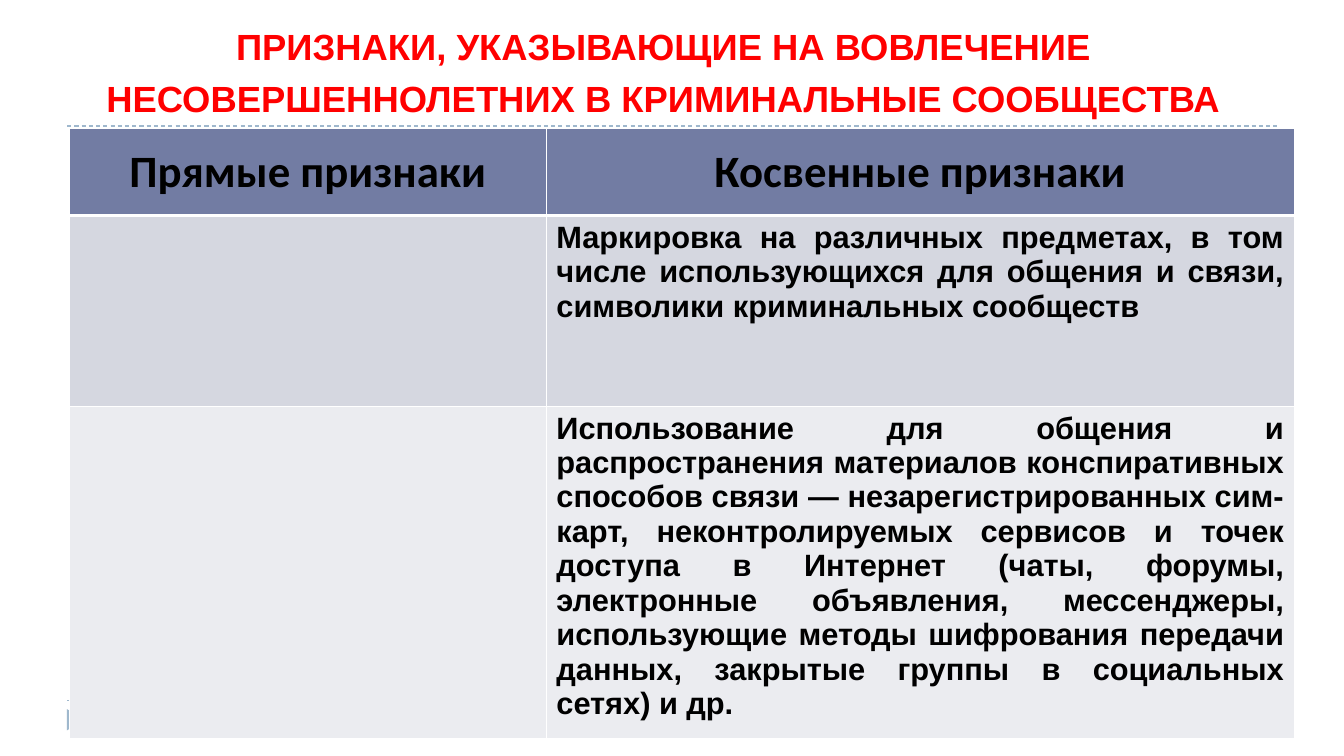
from dataclasses import dataclass

from lxml.etree import SubElement
from pptx import Presentation
from pptx.dml.color import RGBColor
from pptx.enum.dml import MSO_LINE_DASH_STYLE as Dash
from pptx.enum.shapes import MSO_CONNECTOR as Connector, MSO_SHAPE as Shape
from pptx.enum.text import MSO_ANCHOR as Anchor, MSO_AUTO_SIZE as AutoSize, PP_ALIGN as Align
from pptx.oxml.ns import qn
from pptx.util import Pt


@dataclass(frozen=True)
class Theme:
    title: str = "FF0000"
    text: str = "000000"
    accent: str = "9FB8CD"
    border: str = "FFFFFF"
    header_fill: str = "727CA3"
    row_fills: tuple = ("D5D7E0", "EBECF0")
    body_font: str = "Arial"
    header_font: str = "Calibri"
    title_size: int = 26
    header_size: int = 32
    body_size: int = 22


THEME = Theme()
TITLE = "ПРИЗНАКИ, УКАЗЫВАЮЩИЕ НА ВОВЛЕЧЕНИЕ НЕСОВЕРШЕННОЛЕТНИХ В КРИМИНАЛЬНЫЕ СООБЩЕСТВА"
HEADERS = ("Прямые признаки", "Косвенные признаки")
SIGNS = (
    ("", "Маркировка на различных предметах, в том числе использующихся для общения "
         "и связи, символики криминальных сообществ"),
    ("", "Использование для общения и распространения материалов конспиративных способов "
         "связи — незарегистрированных сим-карт, неконтролируемых сервисов и точек доступа "
         "в Интернет (чаты, форумы, электронные объявления, мессенджеры, использующие методы "
         "шифрования передачи данных, закрытые группы в социальных сетях) и др."),
)
COLUMN_WIDTHS = (340.6, 534.2)
ROW_HEIGHTS = (62.6, 136.1, 237.6)


def color(value):
    return RGBColor.from_string(value)


def add_text(para, text, font, size, ink, align):
    para.alignment = align
    span = para.add_run()
    span.text = text
    span.font.name = font
    span.font.size = Pt(size)
    span.font.bold = True
    span.font.color.rgb = color(ink)


def add_dashed_rule(page, y):
    rule = page.shapes.add_connector(Connector.STRAIGHT, Pt(48), Pt(y), Pt(912), Pt(y))
    rule.line.color.rgb = color(THEME.accent)
    rule.line.width = Pt(0.75)
    rule.line.dash_style = Dash.DASH
    SubElement(rule._element.spPr, qn("a:effectLst"))


def add_corner_marker(page):
    marker = page.shapes.add_shape(
        Shape.ISOSCELES_TRIANGLE, Pt(46.8), Pt(507.6), Pt(15.1), Pt(13))
    marker.rotation = 90
    marker.shadow.inherit = False
    marker.fill.solid()
    marker.fill.fore_color.rgb = color(THEME.accent)
    marker.line.fill.background()


def set_title(page):
    title = page.shapes.title
    title.left, title.top = Pt(49.7), Pt(7.2)
    title.width, title.height = Pt(848.9), Pt(72)
    frame = title.text_frame
    frame.word_wrap = True
    frame.auto_size = AutoSize.NONE
    frame.vertical_anchor = Anchor.TOP
    para = frame.paragraphs[0]
    para.line_spacing = 1.2
    para.space_before = Pt(10)
    add_text(para, TITLE, THEME.body_font, THEME.title_size, THEME.title, Align.CENTER)


def set_borders(cell, widths):
    properties = cell._tc.get_or_add_tcPr()
    for side, width in widths.items():
        line = SubElement(properties, qn(f"a:ln{side}"), w=str(Pt(width)))
        fill = SubElement(line, qn("a:solidFill"))
        SubElement(fill, qn("a:srgbClr"), val=THEME.border)


def style_cell(cell, fill, top, bottom):
    set_borders(cell, {"L": 1, "R": 1, "T": top, "B": bottom})
    cell.fill.solid()
    cell.fill.fore_color.rgb = color(fill)


def add_signs_table(page):
    table = page.shapes.add_table(
        len(ROW_HEIGHTS), len(COLUMN_WIDTHS), Pt(49.7), Pt(91.4),
        Pt(sum(COLUMN_WIDTHS)), Pt(sum(ROW_HEIGHTS))).table
    for column, width in zip(table.columns, COLUMN_WIDTHS):
        column.width = Pt(width)
    for row, height in zip(table.rows, ROW_HEIGHTS):
        row.height = Pt(height)
    for column, text in enumerate(HEADERS):
        cell = table.cell(0, column)
        style_cell(cell, THEME.header_fill, 1, 3)
        cell.vertical_anchor = Anchor.MIDDLE
        add_text(cell.text_frame.paragraphs[0], text, THEME.header_font,
                 THEME.header_size, THEME.text, Align.CENTER)
    for row, (texts, fill) in enumerate(zip(SIGNS, THEME.row_fills), start=1):
        for column, text in enumerate(texts):
            cell = table.cell(row, column)
            style_cell(cell, fill, 3 if row == 1 else 1, 1)
            if text:
                add_text(cell.text_frame.paragraphs[0], text, THEME.body_font,
                         THEME.body_size, THEME.text, Align.JUSTIFY)


def main():
    deck = Presentation()
    deck.slide_width, deck.slide_height = Pt(960), Pt(540)
    page = deck.slides.add_slide(deck.slide_layouts.get_by_name("Title Only"))
    for y in (500.4, 90):
        add_dashed_rule(page, y)
    add_corner_marker(page)
    set_title(page)
    add_signs_table(page)
    deck.save("out.pptx")


if __name__ == "__main__":
    main()
